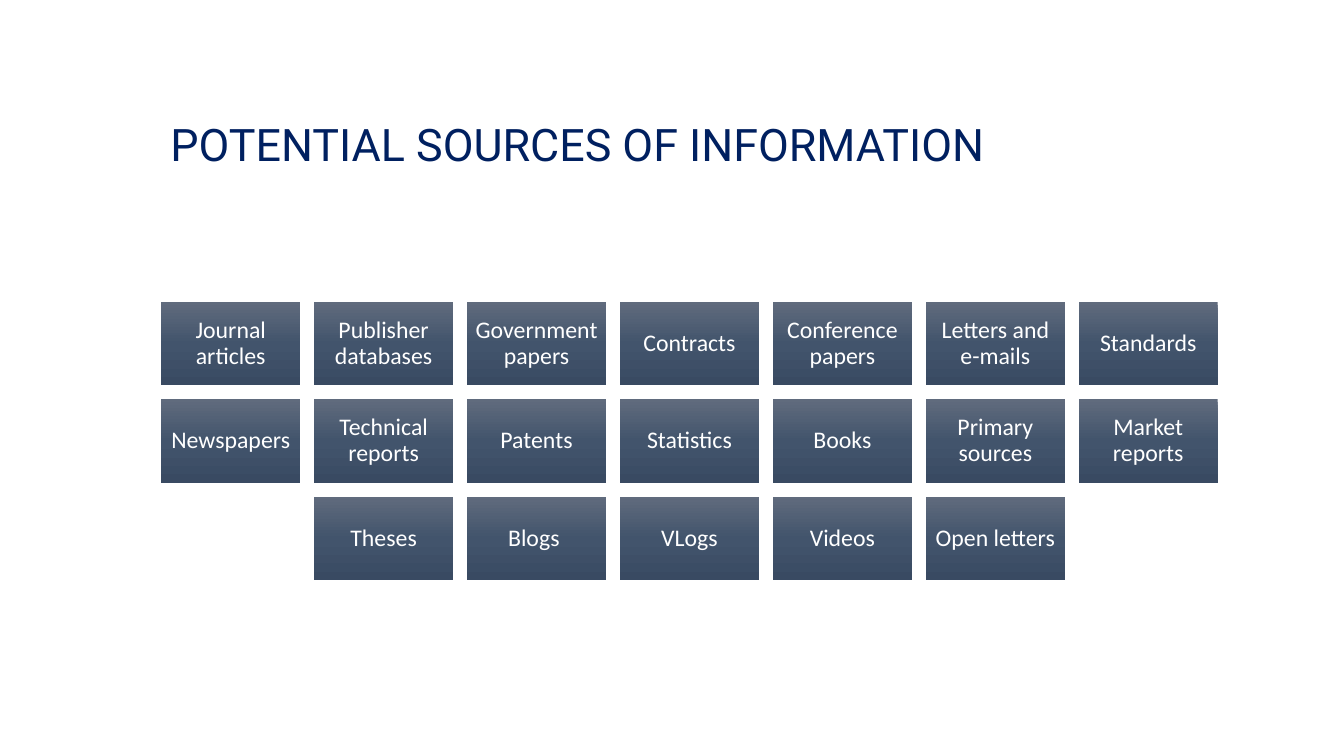
from copy import deepcopy

from pptx import Presentation
from pptx.dml.color import RGBColor
from pptx.enum import shapes, text
from pptx.oxml import ns
from pptx.util import Pt

TITLE = "POTENTIAL SOURCES OF INFORMATION"
SOURCES = [
    ["Journal articles", "Publisher databases", "Government papers", "Contracts",
     "Conference papers", "Letters and e-mails", "Standards"],
    ["Newspapers", "Technical reports", "Patents", "Statistics",
     "Books", "Primary sources", "Market reports"],
    ["Theses", "Blogs ", "VLogs", "Videos", "Open letters"],
]
GRADIENT = [(0, "606B7D"), (0.5, "42546C"), (1, "394A62")]
NAVY, WHITE = "002060", "FFFFFF"

GRID_CENTER, GRID_TOP = 492.5, 215.8
TILE_WIDTH = 99.3
TILE_HEIGHT = TILE_WIDTH * 0.6
GAP = TILE_WIDTH * 0.1


def color(value):
    return RGBColor.from_string(value)


def style(para, font_name, size, font_color, align):
    para.alignment = align
    para.line_spacing = 0.9
    para.font.name = font_name
    para.font.size = Pt(size)
    para.font.color.rgb = color(font_color)


def fill_gradient(shape):
    shape.fill.gradient()
    shape.fill.gradient_angle = 270
    stop_list = shape.element.spPr.find(".//" + ns.qn("a:gsLst"))
    stop_list.append(deepcopy(stop_list[0]))
    for stop, (position, value) in zip(shape.fill.gradient_stops, GRADIENT):
        stop.position = position
        stop.color.rgb = color(value)


def add_tile(page, label, left, top):
    tile = page.shapes.add_shape(shapes.MSO_SHAPE.RECTANGLE, Pt(left), Pt(top),
                                 Pt(TILE_WIDTH), Pt(TILE_HEIGHT))
    tile.shadow.inherit = False
    tile.line.fill.background()
    fill_gradient(tile)
    frame = tile.text_frame
    frame.word_wrap = True
    frame.vertical_anchor = text.MSO_ANCHOR.MIDDLE
    frame.margin_left = frame.margin_right = Pt(5)
    frame.margin_top = frame.margin_bottom = Pt(5)
    frame.text = label
    style(frame.paragraphs[0], "Calibri", 17, WHITE, text.PP_ALIGN.CENTER)


def main():
    deck = Presentation()
    deck.slide_width, deck.slide_height = Pt(960), Pt(540)
    page = deck.slides.add_slide(deck.slide_layouts[5])

    title = page.shapes.title
    title.left, title.top = Pt(114.5), Pt(63.4)
    title.width, title.height = Pt(756), Pt(82.8)
    title.text_frame.text = TITLE
    title.text_frame.vertical_anchor = text.MSO_ANCHOR.MIDDLE
    style(title.text_frame.paragraphs[0], "Roboto", 32, NAVY, text.PP_ALIGN.LEFT)

    for row, labels in enumerate(SOURCES):
        row_width = len(labels) * (TILE_WIDTH + GAP) - GAP
        row_left = GRID_CENTER - row_width / 2
        row_top = GRID_TOP + row * (TILE_HEIGHT + GAP)
        for column, label in enumerate(labels):
            add_tile(page, label, row_left + column * (TILE_WIDTH + GAP), row_top)

    deck.save("out.pptx")


if __name__ == "__main__":
    main()
